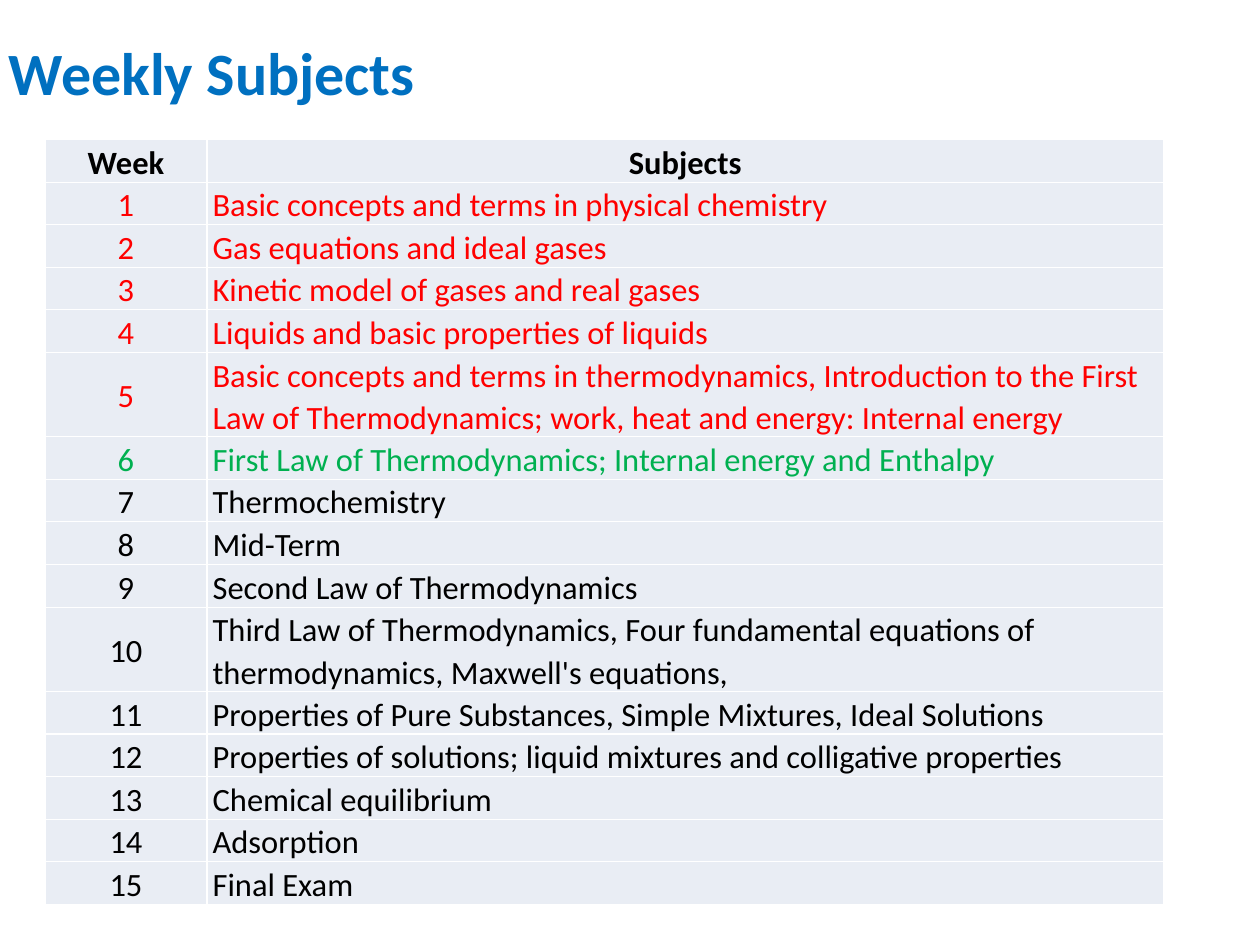
from dataclasses import dataclass

from lxml import etree
from pptx import Presentation
from pptx.dml.color import RGBColor
from pptx.enum.text import MSO_ANCHOR, MSO_AUTO_SIZE, PP_ALIGN
from pptx.oxml.ns import qn
from pptx.util import Pt

CENTER, LEFT = PP_ALIGN.CENTER, PP_ALIGN.LEFT
MIDDLE = MSO_ANCHOR.MIDDLE
FIT_SHAPE = MSO_AUTO_SIZE.SHAPE_TO_FIT_TEXT

FONT = "Calibri"
COLORS = {
    "title": "0070C0",
    "done": "FF0000",
    "current": "00B050",
    "text": "000000",
    "cell": "E9EDF4",
    "border": "FFFFFF",
}
COL_WIDTHS = (129.6, 765.4)
LINE_ROW, TWO_LINE_ROW = 34.1, 67.3
CURRENT_WEEK = 6


@dataclass
class Row:
    week: str
    subject: str
    color: str = "text"
    height: float = LINE_ROW
    header: bool = False


SUBJECTS = [
    "Basic concepts and terms in physical chemistry",
    "Gas equations and ideal gases",
    "Kinetic model of gases and real gases",
    "Liquids and basic properties of liquids",
    "Basic concepts and terms in thermodynamics, Introduction to the First "
    "Law of Thermodynamics; work, heat and energy: Internal energy",
    "First Law of Thermodynamics; Internal energy and Enthalpy",
    "Thermochemistry",
    "Mid-Term",
    "Second Law of Thermodynamics",
    "Third Law of Thermodynamics, Four fundamental equations of "
    "thermodynamics, Maxwell's equations,",
    "Properties of Pure Substances, Simple Mixtures, Ideal Solutions",
    "Properties of solutions; liquid mixtures and colligative properties",
    "Chemical equilibrium",
    "Adsorption",
    "Final Exam",
]
TWO_LINE_WEEKS = (5, 10)


def week_color(week: int) -> str:
    if week == CURRENT_WEEK:
        return "current"
    return "done" if week < CURRENT_WEEK else "text"


def add_run(p, text: str, size: float, color: str, bold: bool) -> None:
    r = p.add_run()
    r.text = text
    r.font.name = FONT
    r.font.size = Pt(size)
    r.font.bold = bold
    r.font.color.rgb = RGBColor.from_string(COLORS[color])


def add_borders(cell) -> None:
    """Draw a thin line on all four sides; call before the fill is set."""
    tc_pr = cell._tc.get_or_add_tcPr()
    for side in ("a:lnL", "a:lnR", "a:lnT", "a:lnB"):
        ln = etree.SubElement(tc_pr, qn(side), w=str(Pt(1)))
        fill = etree.SubElement(ln, qn("a:solidFill"))
        etree.SubElement(fill, qn("a:srgbClr"), val=COLORS["border"])


def fill_cell(cell, text: str, row: Row, align: PP_ALIGN) -> None:
    add_borders(cell)
    cell.fill.solid()
    cell.fill.fore_color.rgb = RGBColor.from_string(COLORS["cell"])
    cell.vertical_anchor = MIDDLE
    cell.margin_left = cell.margin_right = Pt(4.5)
    cell.margin_top, cell.margin_bottom = Pt(0.7), Pt(0)
    p = cell.text_frame.paragraphs[0]
    p.alignment = align
    p.line_spacing = 1.07
    add_run(p, text, 26, row.color, row.header)


def add_title(s, text: str) -> None:
    tf = s.shapes.add_textbox(Pt(0), Pt(24.5), Pt(342.7), Pt(65.5)).text_frame
    tf.word_wrap = False
    tf.auto_size = FIT_SHAPE
    add_run(tf.paragraphs[0], text, 48, "title", True)


def add_schedule(s, rows: list[Row]) -> None:
    height = sum(row.height for row in rows)
    table = s.shapes.add_table(len(rows), len(COL_WIDTHS), Pt(36), Pt(111.6),
                               Pt(sum(COL_WIDTHS)), Pt(height)).table
    table.first_row = table.horz_banding = False
    for col, width in zip(table.columns, COL_WIDTHS):
        col.width = Pt(width)
    for i, row in enumerate(rows):
        table.rows[i].height = Pt(row.height)
        fill_cell(table.cell(i, 0), row.week, row, CENTER)
        fill_cell(table.cell(i, 1), row.subject, row,
                  CENTER if row.header else LEFT)


def main() -> None:
    prs = Presentation()
    prs.slide_width, prs.slide_height = Pt(1008), Pt(756)
    s = prs.slides.add_slide(prs.slide_layouts[6])
    add_title(s, "Weekly Subjects")
    rows = [Row("Week", "Subjects", header=True)]
    for week, subject in enumerate(SUBJECTS, start=1):
        height = TWO_LINE_ROW if week in TWO_LINE_WEEKS else LINE_ROW
        rows.append(Row(str(week), subject, week_color(week), height))
    add_schedule(s, rows)
    prs.save("out.pptx")


if __name__ == "__main__":
    main()
